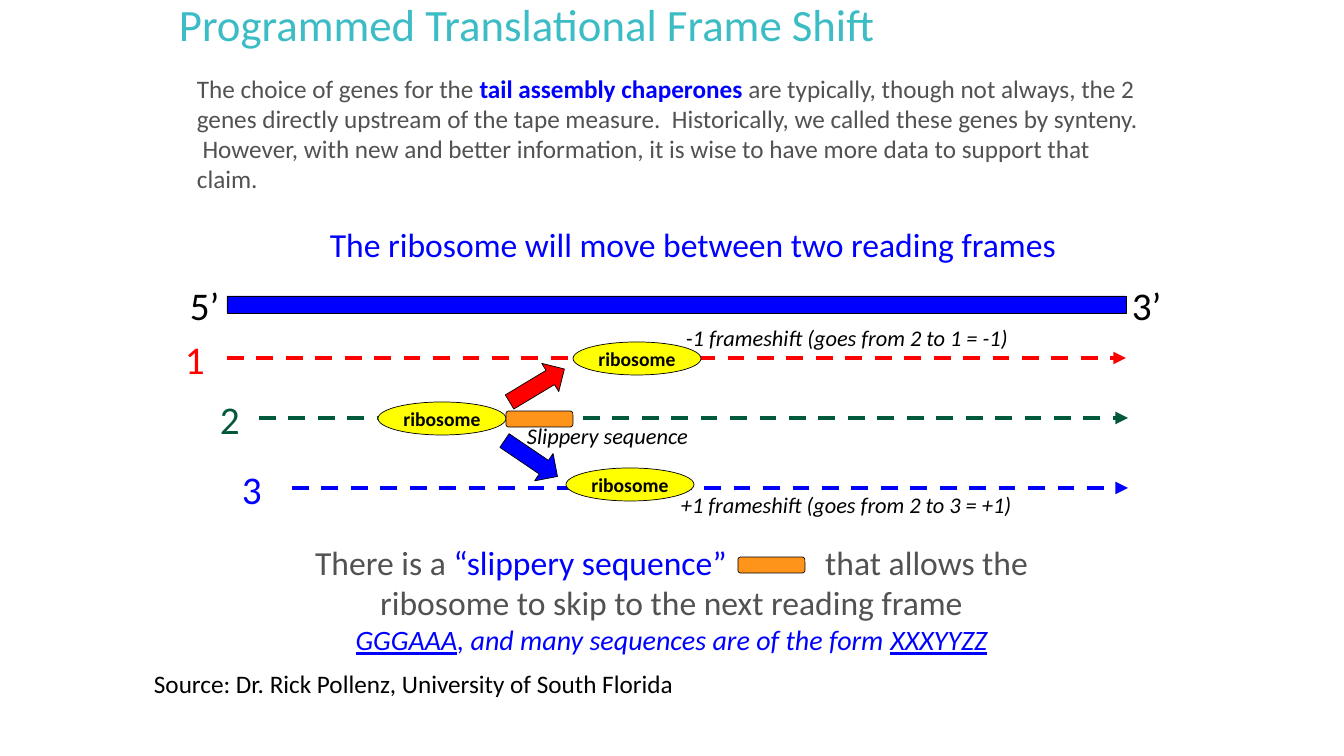
from dataclasses import dataclass

from lxml import etree
from pptx import Presentation
from pptx.dml.color import RGBColor
from pptx.enum.dml import MSO_LINE
from pptx.enum.shapes import MSO_CONNECTOR, MSO_SHAPE
from pptx.enum.text import MSO_ANCHOR, PP_ALIGN
from pptx.oxml.ns import qn
from pptx.shapes.autoshape import Shape
from pptx.slide import Slide
from pptx.text.text import TextFrame
from pptx.util import Emu, Pt

RECT, ROUND = MSO_SHAPE.RECTANGLE, MSO_SHAPE.ROUNDED_RECTANGLE
OVAL, ARROW = MSO_SHAPE.OVAL, MSO_SHAPE.RIGHT_ARROW
STRAIGHT, DASH = MSO_CONNECTOR.STRAIGHT, MSO_LINE.DASH
LEFT, CENTER = PP_ALIGN.LEFT, PP_ALIGN.CENTER
TOP, MIDDLE = MSO_ANCHOR.TOP, MSO_ANCHOR.MIDDLE
SCALE = 914400 / 100.8  # EMU in one px


@dataclass(frozen=True)
class Theme:
    font: str = "Calibri"
    teal: str = "3CBCC5"
    blue: str = "0000FF"
    gray: str = "525252"
    black: str = "000000"
    red: str = "FF0000"
    green: str = "00593A"
    yellow: str = "FFFF00"
    orange: str = "FF941B"
    title: int = 32
    end: int = 28
    head: int = 24
    form: int = 20
    body: int = 18
    note: int = 16
    tag: int = 14
    thin: float = 0.5
    thick: int = 3


T = Theme()


@dataclass(frozen=True)
class Bit:
    """A stretch of text in one style; gap is letter spacing in points."""
    text: str
    size: int
    color: str = T.black
    bold: bool = False
    italic: bool = False
    under: bool = False
    gap: float = 0


@dataclass(frozen=True)
class Box:
    x: int
    y: int
    w: int
    h: int
    lines: list[list[Bit]]
    wrap: bool = False
    align: PP_ALIGN = LEFT
    anchor: MSO_ANCHOR = TOP
    space: float = 1.0


@dataclass(frozen=True)
class Form:
    kind: MSO_SHAPE
    x: int
    y: int
    w: int
    h: int
    fill: str
    turn: float = 0
    label: str = ""


@dataclass(frozen=True)
class Frame:
    """One reading frame: its number and its dashed arrow."""
    name: str
    color: str
    tag: int
    start: int
    end: int
    y: int


def px(n: int) -> Emu:
    return Emu(round(n * SCALE))


def rgb(code: str) -> RGBColor:
    return RGBColor.from_string(code)


def write(frame: TextFrame, lines: list[list[Bit]], align: PP_ALIGN,
          space: float = 1.0) -> None:
    for i, bits in enumerate(lines):
        para = frame.add_paragraph() if i else frame.paragraphs[0]
        para.alignment, para.line_spacing = align, space
        for bit in bits:
            run = para.add_run()
            run.text = bit.text
            font = run.font
            font.name, font.size = T.font, Pt(bit.size)
            font.bold, font.italic, font.underline = bit.bold, bit.italic, bit.under
            font.color.rgb = rgb(bit.color)
            if bit.gap:
                run._r.get_or_add_rPr().set("spc", str(round(bit.gap * 100)))


def add_box(slide: Slide, box: Box) -> None:
    shape = slide.shapes.add_textbox(*map(px, (box.x, box.y, box.w, box.h)))
    frame = shape.text_frame
    frame.word_wrap, frame.vertical_anchor = box.wrap, box.anchor
    write(frame, box.lines, box.align, box.space)


def add_form(slide: Slide, form: Form) -> Shape:
    shape = slide.shapes.add_shape(form.kind, *map(px, (form.x, form.y, form.w, form.h)))
    shape.shadow.inherit = False
    shape.rotation = form.turn
    shape.fill.solid()
    shape.fill.fore_color.rgb = rgb(form.fill)
    shape.line.color.rgb = rgb(T.black)
    shape.line.width = Pt(T.thin)
    if form.label:
        frame = shape.text_frame
        frame.word_wrap, frame.vertical_anchor = False, MIDDLE
        frame.margin_top = frame.margin_bottom = 0
        write(frame, [[Bit(form.label, T.tag, bold=True)]], CENTER)
    return shape


def add_frame(slide: Slide, row: Frame) -> None:
    y = px(row.y)
    wire = slide.shapes.add_connector(STRAIGHT, px(row.start), y, px(row.end), y)
    wire.line.color.rgb = rgb(row.color)
    wire.line.width = Pt(T.thick)
    wire.line.dash_style = DASH
    etree.SubElement(wire.line._get_or_add_ln(), qn("a:tailEnd"), type="triangle")
    etree.SubElement(wire._element.spPr, qn("a:effectLst"))
    add_box(slide, Box(row.tag, row.y - 28, 40, 57, [[Bit(row.name, T.end, row.color)]]))


def ribosome(x: int, y: int) -> Form:
    return Form(OVAL, x, y, 128, 33, T.yellow, label="ribosome")


def slip(x: int, y: int) -> Form:
    return Form(ROUND, x, y, 67, 16, T.orange)


def note(x: int, y: int, w: int, text: str) -> Box:
    return Box(x, y, w, 37, [[Bit(text, T.note, italic=True)]])


INTRO = [
    Bit("The choice of genes for the ", T.body, T.gray),
    Bit("tail assembly chaperones ", T.body, T.blue, bold=True),
    Bit("are typically, though not always, the 2 genes directly upstream of the "
        "tape measure.  Historically, we called these genes by synteny.  However, "
        "with new and better information, it is wise to have more data to support "
        "that claim.", T.body, T.gray),
]
CLOSE = [
    [Bit("There is a ", T.head, T.gray),
     Bit("“slippery sequence", T.head, T.blue),
     Bit("” ", T.head, T.blue, gap=32.5),  # leaves room for the orange bar
     Bit("that allows the ribosome to skip to the next reading frame", T.head, T.gray)],
    [Bit("GGGAAA", T.form, T.blue, italic=True, under=True),
     Bit(", and many sequences are of the form ", T.form, T.blue, italic=True),
     Bit("XXXYYZZ", T.form, T.blue, italic=True, under=True)],
]
FRAMES = [
    Frame("1", T.red, 175, 227, 1126, 358),
    Frame("2", T.green, 210, 259, 1128, 418),
    Frame("3", T.blue, 232, 292, 1128, 488),
]
FORMS = [
    Form(RECT, 227, 296, 899, 17, T.blue),
    ribosome(378, 402),
    Form(ARROW, 505, 369, 64, 33, T.red, turn=329),
    Form(ARROW, 499, 442, 64, 33, T.blue, turn=34.1),
    ribosome(573, 342),
    ribosome(566, 468),
    slip(506, 411),
    slip(738, 557),
]
BOXES = [
    Box(169, -15, 1006, 84,
        [[Bit("Programmed Translational Frame Shift", T.title, T.teal)]],
        wrap=True, anchor=MIDDLE, space=0.9),
    Box(187, 68, 966, 132, [INTRO], wrap=True),
    Box(320, 219, 753, 50,
        [[Bit("The ribosome will move between two reading frames", T.head, T.blue)]]),
    Box(180, 276, 50, 57, [[Bit("5’", T.end)]]),
    Box(1122, 276, 50, 57, [[Bit("3’", T.end)]]),
    note(676, 319, 354, "-1 frameshift (goes from 2 to 1 = -1)"),
    note(517, 417, 188, "Slippery sequence"),
    note(671, 486, 356, "+1 frameshift (goes from 2 to 3 = +1)"),
    Box(257, 537, 829, 126, CLOSE, wrap=True, align=CENTER),
    Box(144, 663, 1076, 40,
        [[Bit("Source: Dr. Rick Pollenz, University of South Florida", T.body)]], wrap=True),
]


def main() -> None:
    deck = Presentation()
    deck.slide_width, deck.slide_height = px(1344), px(756)
    slide = deck.slides.add_slide(deck.slide_layouts[6])
    for row in FRAMES:
        add_frame(slide, row)
    for form in FORMS:
        add_form(slide, form)
    for box in BOXES:
        add_box(slide, box)
    deck.save("out.pptx")


if __name__ == "__main__":
    main()
